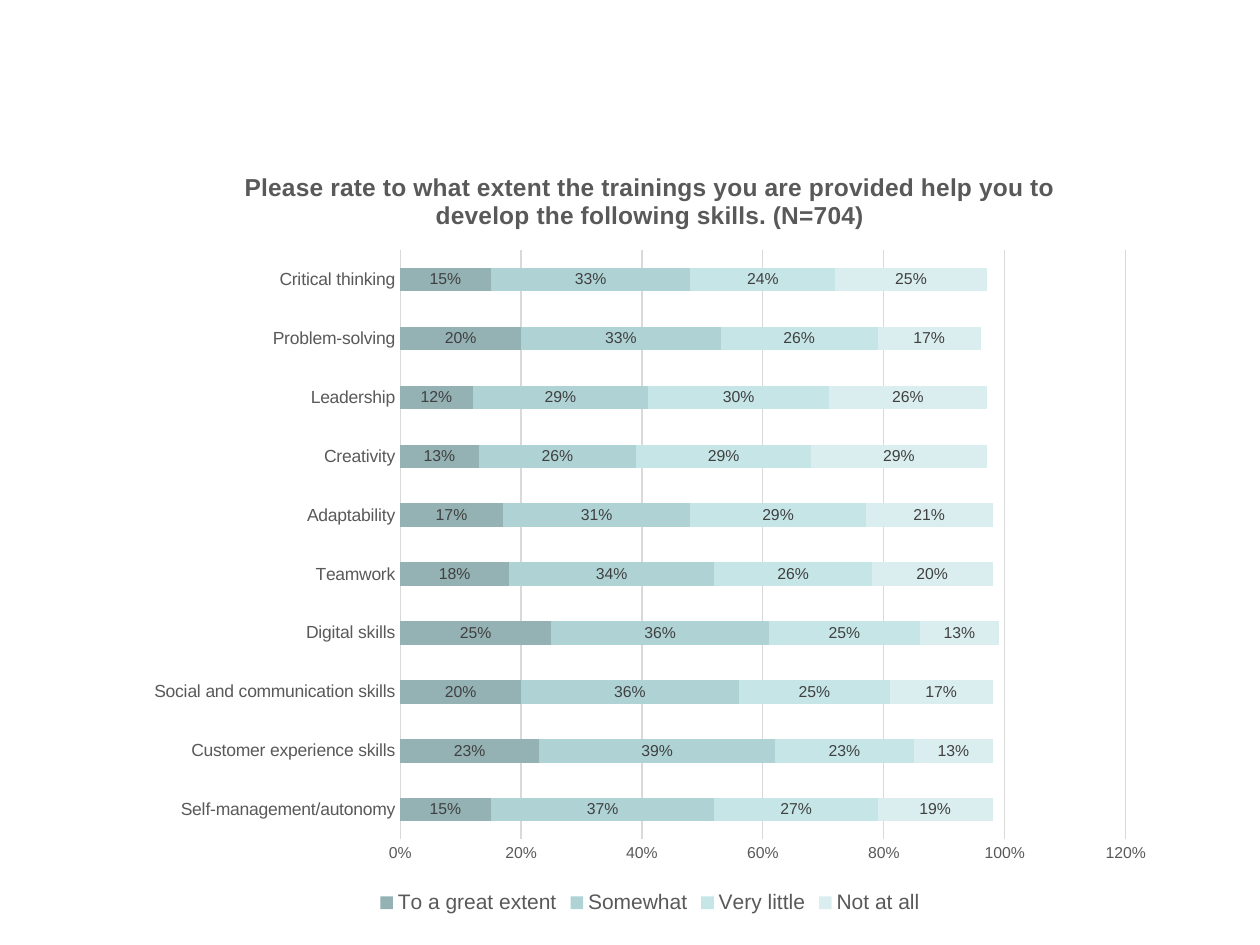
import pptx
import pptx.util
import pptx.dml.color
import pptx.chart.data
import pptx.enum.chart
import pptx.oxml
import pptx.oxml.ns

SCALE = 914400 / 126
TITLE = ("Please rate to what extent the trainings you are provided help "
         "you to develop the following skills. (N=704)")
SKILLS = [
    "Self-management/autonomy", "Customer experience skills",
    "Social and communication skills", "Digital skills", "Teamwork",
    "Adaptability", "Creativity", "Leadership", "Problem-solving",
    "Critical thinking",
]
SERIES = [
    ("To a great extent", "94B1B3", [15, 23, 20, 25, 18, 17, 13, 12, 20, 15]),
    ("Somewhat", "AFD2D5", [37, 39, 36, 36, 34, 31, 26, 29, 33, 33]),
    ("Very little", "C6E5E7", [27, 23, 25, 25, 26, 29, 29, 30, 26, 24]),
    ("Not at all", "DBEEEF", [19, 13, 17, 13, 20, 21, 29, 26, 17, 25]),
]


def px(n):
    return pptx.util.Emu(round(n * SCALE))


def color(code):
    return pptx.dml.color.RGBColor.from_string(code)


def style(font, size, code, bold=False):
    font.name = "Arial"
    font.size = pptx.util.Pt(size)
    font.bold = bold
    font.color.rgb = color(code)


def rule(line):
    line.color.rgb = color("D9D9D9")
    line.width = pptx.util.Pt(0.75)


def place(chart, box, plot):
    left, top, width, height = box
    x, y, w, h = plot
    sizes = {"x": x / width, "y": y / height, "w": w / width, "h": h / height}
    area = chart.plots[0]._element.getparent()
    for old in area.findall(pptx.oxml.ns.qn("c:layout")):
        area.remove(old)
    parts = '<c:layoutTarget val="inner"/><c:xMode val="edge"/><c:yMode val="edge"/>'
    parts += "".join(f'<c:{key} val="{size:.2f}"/>' if key == "z" else
                     f'<c:{key} val="{size:.3f}"/>' for key, size in sizes.items())
    area.insert(0, pptx.oxml.parse_xml(
        f'<c:layout {pptx.oxml.ns.nsdecls("c")}>'
        f'<c:manualLayout>{parts}</c:manualLayout></c:layout>'))


def axes(chart):
    none = pptx.enum.chart.XL_TICK_MARK.NONE
    cat, val = chart.category_axis, chart.value_axis
    for axis, size in ((cat, 10), (val, 9)):
        axis.major_tick_mark = axis.minor_tick_mark = none
        style(axis.tick_labels.font, size, "595959")
    rule(cat.format.line)
    val.format.line.fill.background()
    val.minimum_scale, val.maximum_scale, val.major_unit = 0, 1.2, 0.2
    val.tick_labels.number_format = "0%"
    val.tick_labels.number_format_is_linked = False
    val.has_major_gridlines = True
    rule(val.major_gridlines.format.line)


def bars(plot):
    plot.gap_width, plot.overlap = 150, 100
    plot.vary_by_categories = False
    for series, (name, code, points) in zip(plot.series, SERIES):
        series.format.fill.solid()
        series.format.fill.fore_color.rgb = color(code)
        labels = series.data_labels
        labels.show_value = True
        labels.number_format = "0%"
        labels.number_format_is_linked = False
        labels.position = pptx.enum.chart.XL_LABEL_POSITION.CENTER
        style(labels.font, 9, "404040")


def survey(slide, box):
    data = pptx.chart.data.CategoryChartData(number_format="0%")
    data.categories = SKILLS
    for name, code, points in SERIES:
        data.add_series(name, [point / 100 for point in points])
    chart = slide.shapes.add_chart(
        pptx.enum.chart.XL_CHART_TYPE.BAR_STACKED, *map(px, box), data).chart
    style(chart.font, 10, "000000")
    chart.has_title = True
    chart.chart_title.include_in_layout = False
    frame = chart.chart_title.text_frame
    frame.text = TITLE
    style(frame.paragraphs[0].runs[0].font, 14, "595959", True)
    chart.has_legend = True
    chart.legend.position = pptx.enum.chart.XL_LEGEND_POSITION.BOTTOM
    chart.legend.include_in_layout = False
    style(chart.legend.font, 12, "595959")
    axes(chart)
    bars(chart.plots[0])
    place(chart, box, (266, 105, 725, 589))


def main():
    deck = pptx.Presentation()
    deck.slide_width, deck.slide_height = px(1260), px(945)
    slide = deck.slides.add_slide(deck.slide_layouts[6])
    survey(slide, (134, 145, 1032, 774))
    deck.save("out.pptx")


if __name__ == "__main__":
    main()
